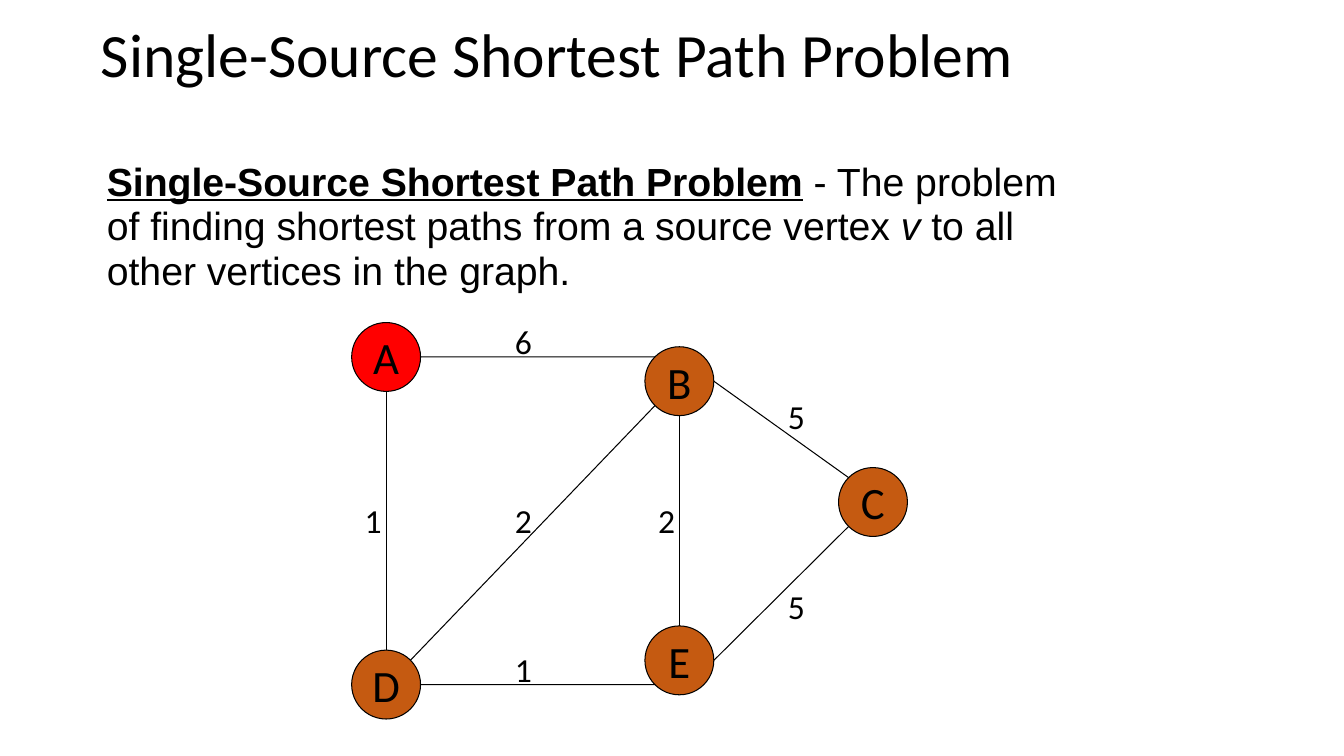
import math

import pptx
import pptx.dml.color
import pptx.enum.shapes
import pptx.enum.text
import pptx.util
from lxml import etree
from pptx.oxml.ns import qn

Pt = pptx.util.Pt
Anchor = pptx.enum.text.MSO_ANCHOR
Align = pptx.enum.text.PP_ALIGN
AutoSize = pptx.enum.text.MSO_AUTO_SIZE

COLORS = {"ink": "000000", "source": "FF0000", "vertex": "C55A11"}
RADIUS = 24.6

# Vertex centres
VERTICES = {
    "A": (275.8, 255),
    "D": (275.8, 489),
    "E": (485.3, 471.7),
    "B": (485.3, 272.3),
    "C": (623.6, 358.6),
}

# Each end is a vertex and an angle on its rim, clockwise from the right
EDGES = [
    ("A", 0, "B", 225),
    ("A", 90, "D", 270),
    ("D", 0, "E", 135),
    ("E", 270, "B", 90),
    ("D", 315, "B", 135),
    ("B", 0, "C", 225),
    ("E", 0, "C", 135),
]

# Weight and the top left corner of its label
WEIGHTS = [
    ("6", 360.7, 226),
    ("1", 253.4, 353.5),
    ("2", 360.7, 353.5),
    ("1", 360.7, 460),
    ("2", 463, 353.5),
    ("5", 555.8, 279.4),
    ("5", 555.8, 414.7),
]


def color(name):
    return pptx.dml.color.RGBColor.from_string(COLORS[name])


def rim_point(vertex, angle):
    x, y = VERTICES[vertex]
    turn = math.radians(angle)
    return Pt(x + RADIUS * math.cos(turn)), Pt(y + RADIUS * math.sin(turn))


class GraphSlide:
    """Holds the slide and the style shared by its elements."""

    heading_font = "Calibri"
    body_font = "Arial"
    line_width = Pt(0.75)

    def __init__(self, presentation):
        self.slide = presentation.slides.add_slide(presentation.slide_layouts[5])
        self.shapes = self.slide.shapes

    def style(self, paragraph, size, name):
        paragraph.font.size = Pt(size)
        paragraph.font.name = name
        paragraph.font.color.rgb = color("ink")

    def title(self, text, left, top, width, height):
        title = self.shapes.title
        title.left, title.top = Pt(left), Pt(top)
        title.width, title.height = Pt(width), Pt(height)
        frame = title.text_frame
        frame.text = text
        frame.auto_size = AutoSize.NONE
        frame.vertical_anchor = Anchor.MIDDLE
        paragraph = frame.paragraphs[0]
        paragraph.alignment = Align.LEFT
        paragraph.line_spacing = 0.9
        self.style(paragraph, 44, self.heading_font)

    def definition(self, runs, left, top, width, height):
        """Add a paragraph from pairs of text and the font flags to set."""
        box = self.shapes.add_textbox(Pt(left), Pt(top), Pt(width), Pt(height))
        frame = box.text_frame
        frame.word_wrap = True
        frame.margin_left = frame.margin_right = 0
        frame.margin_top = frame.margin_bottom = 0
        paragraph = frame.paragraphs[0]
        paragraph.line_spacing = 0.95
        self.style(paragraph, 28, self.body_font)
        for text, flags in runs:
            run = paragraph.add_run()
            run.text = text
            for flag in flags:
                setattr(run.font, flag, True)

    def vertex(self, name, fill):
        x, y = VERTICES[name]
        circle = self.shapes.add_shape(
            pptx.enum.shapes.MSO_SHAPE.OVAL,
            Pt(x - RADIUS), Pt(y - RADIUS), Pt(2 * RADIUS), Pt(2 * RADIUS),
        )
        circle.shadow.inherit = False
        circle.fill.solid()
        circle.fill.fore_color.rgb = color(fill)
        circle.line.color.rgb = color("ink")
        circle.line.width = self.line_width
        frame = circle.text_frame
        frame.text = name
        frame.word_wrap = False
        frame.vertical_anchor = Anchor.MIDDLE
        paragraph = frame.paragraphs[0]
        paragraph.alignment = Align.CENTER
        self.style(paragraph, 32, self.heading_font)

    def edge(self, start, start_angle, end, end_angle):
        line = self.shapes.add_connector(
            pptx.enum.shapes.MSO_CONNECTOR.STRAIGHT,
            *rim_point(start, start_angle), *rim_point(end, end_angle),
        )
        line.line.color.rgb = color("ink")
        line.line.width = self.line_width
        etree.SubElement(line._element.spPr, qn("a:effectLst"))

    def weight(self, text, left, top):
        box = self.shapes.add_textbox(Pt(left), Pt(top), Pt(26.6), Pt(36))
        frame = box.text_frame
        frame.text = text
        frame.word_wrap = False
        frame.auto_size = AutoSize.SHAPE_TO_FIT_TEXT
        self.style(frame.paragraphs[0], 24, self.heading_font)


def main():
    presentation = pptx.Presentation()
    presentation.slide_width, presentation.slide_height = Pt(960), Pt(540)
    graph = GraphSlide(presentation)
    graph.title("Single-Source Shortest Path Problem", 64.8, 7.9, 696.2, 66.2)
    graph.definition(
        [
            ("Single-Source Shortest Path Problem", ["bold", "underline"]),
            (" - The problem of finding shortest paths from a source vertex ", []),
            ("v", ["italic"]),
            (" to all other vertices in the graph.", []),
        ],
        76.3, 114.5, 684.7, 388.8,
    )
    for name in VERTICES:
        graph.vertex(name, "source" if name == "A" else "vertex")
    for edge in EDGES:
        graph.edge(*edge)
    for weight in WEIGHTS:
        graph.weight(*weight)
    presentation.save("out.pptx")


if __name__ == "__main__":
    main()
